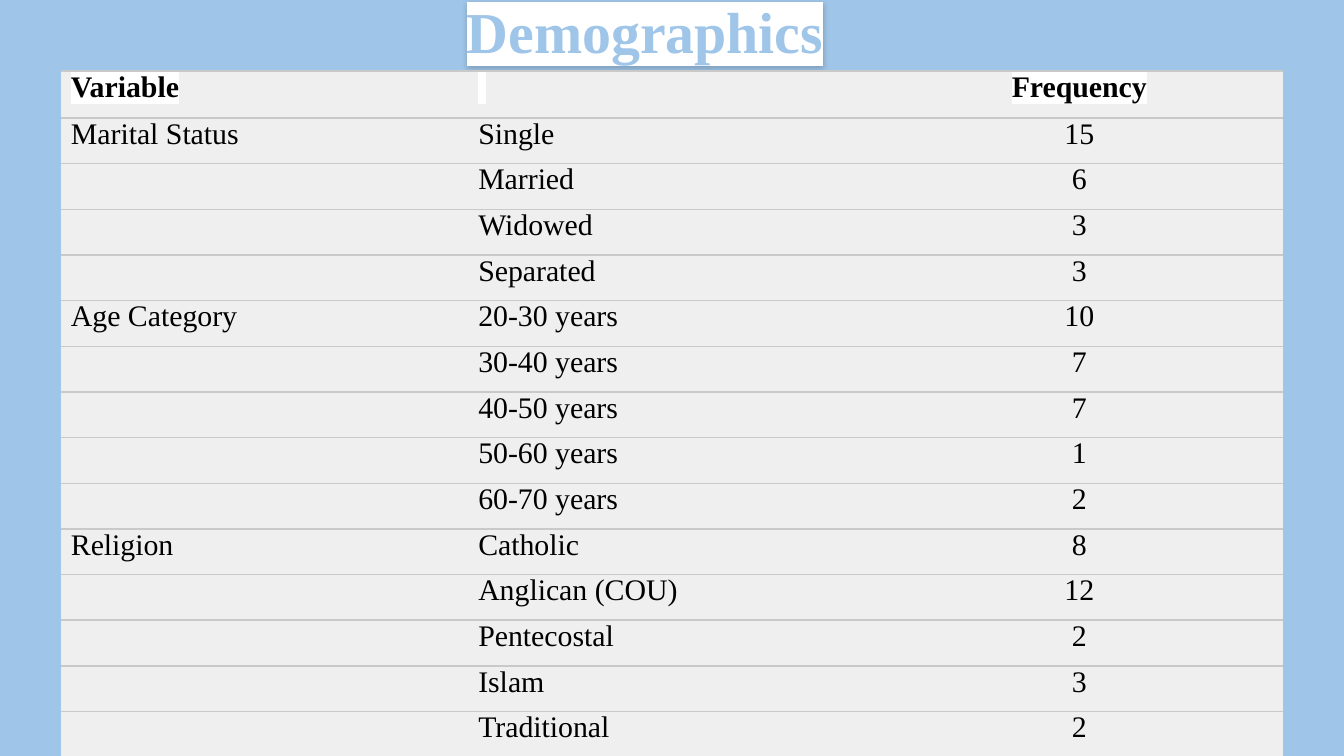
from lxml import etree
from pptx import Presentation
from pptx.dml.color import RGBColor
from pptx.enum.text import MSO_ANCHOR, MSO_AUTO_SIZE, PP_ALIGN
from pptx.oxml import parse_xml
from pptx.oxml.ns import nsdecls, qn
from pptx.util import Pt

CENTER, LEFT = PP_ALIGN.CENTER, PP_ALIGN.LEFT
MIDDLE, TOP = MSO_ANCHOR.MIDDLE, MSO_ANCHOR.TOP
FIXED = MSO_AUTO_SIZE.NONE
FONT = "Times New Roman"
COLORS = {"sky": "9FC5E8", "white": "FFFFFF", "black": "000000",
          "cell": "EFEFEF", "rule": "C9C9C9"}


def px(n):
    return round(n * 9144000 / 1344)


def style(run, size, color, bold, marked):
    font = run.font
    font.name, font.size, font.bold = FONT, Pt(size), bold
    font.color.rgb = RGBColor.from_string(COLORS[color])
    if marked:
        fill = run._r.rPr.find(qn("a:solidFill"))
        fill.addnext(parse_xml(
            f'<a:highlight {nsdecls("a")}><a:srgbClr val="{COLORS["white"]}"/></a:highlight>'))


deck = Presentation()
deck.slide_width, deck.slide_height = px(1344), px(756)
slide = deck.slides.add_slide(deck.slide_layouts[5])
back = slide.background.fill
back.solid()
back.fore_color.rgb = RGBColor.from_string(COLORS["sky"])

title = slide.shapes.title
title.left, title.top, title.width, title.height = px(416), px(-1), px(458), px(72)
frame = title.text_frame
frame.text = "Demographics"
frame.word_wrap = True
frame.auto_size = FIXED
frame.vertical_anchor = MIDDLE
frame.margin_left = frame.margin_right = frame.margin_top = frame.margin_bottom = 0
para = frame.paragraphs[0]
para.alignment, para.line_spacing = CENTER, 0.9
style(para.runs[0], 31, "sky", True, True)
title._element.spPr.append(parse_xml(
    f'<a:effectLst {nsdecls("a")}><a:outerShdw blurRad="40000" dist="10000" dir="5400000">'
    f'<a:srgbClr val="{COLORS["black"]}"><a:alpha val="20000"/></a:srgbClr>'
    '</a:outerShdw></a:effectLst>'))

groups = {
    "Marital Status": [("Single", 15), ("Married", 6), ("Widowed", 3), ("Separated", 3)],
    "Age Category": [("20-30 years", 10), ("30-40 years", 7), ("40-50 years", 7),
                     ("50-60 years", 1), ("60-70 years", 2)],
    "Religion": [("Catholic", 8), ("Anglican (COU)", 12), ("Pentecostal", 2),
                 ("Islam", 3), ("Traditional", 2)],
}
rows = [("Variable", " ", "Frequency")]
for group, items in groups.items():
    for i, (name, count) in enumerate(items):
        rows.append(("" if i else group, name, str(count)))

body = px(594) // 13
table = slide.shapes.add_table(
    len(rows), 3, px(61), px(71), px(1222), px(47) + body * (len(rows) - 1)).table
table.first_row = table.horz_banding = False
for col in table.columns:
    col.width = px(1222) // 3

for r, row in enumerate(rows):
    table.rows[r].height = body if r else px(47)
    for c, text in enumerate(row):
        cell = table.cell(r, c)
        cell.fill.solid()
        cell.fill.fore_color.rgb = RGBColor.from_string(COLORS["cell"])
        cell.margin_left = cell.margin_right = px(10)
        cell.margin_top = cell.margin_bottom = px(13) if text else 0
        cell.vertical_anchor = TOP
        props = cell._tc.get_or_add_tcPr()
        for i, side in enumerate("LRTB"):
            line = etree.Element(qn(f"a:ln{side}"), w=str(Pt(1)))
            if side in "TB":
                fill = etree.SubElement(line, qn("a:solidFill"))
                etree.SubElement(fill, qn("a:srgbClr"), val=COLORS["rule"])
            else:
                etree.SubElement(line, qn("a:noFill"))
            props.insert(i, line)
        para = cell.text_frame.paragraphs[0]
        para.text = text
        para.line_spacing = 0.5
        para.alignment = CENTER if c == 2 else LEFT
        for run in para.runs:
            style(run, 16, "black", r == 0, r == 0)
        if not text:
            end = etree.SubElement(para._p, qn("a:endParaRPr"), sz="1600")
            etree.SubElement(end, qn("a:latin"), typeface=FONT)

deck.save("out.pptx")
